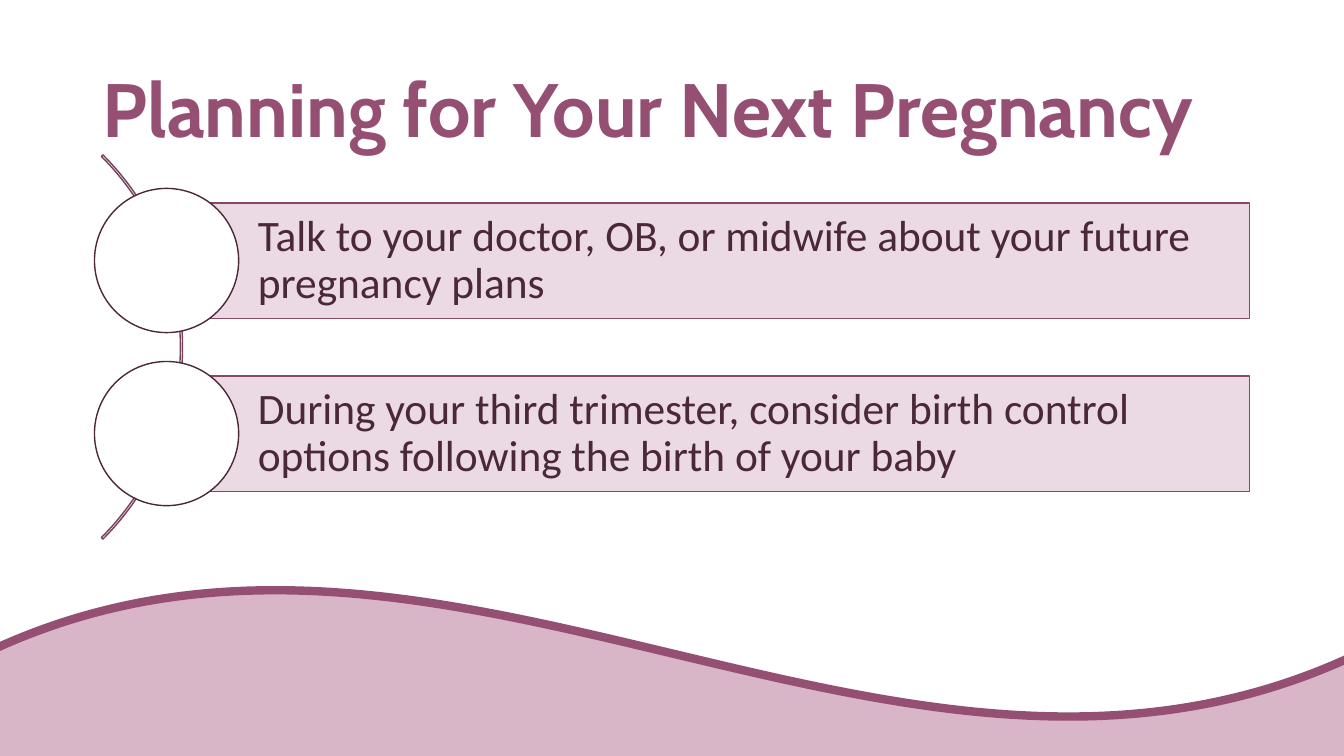
from pptx import Presentation
from pptx.dml.color import RGBColor
from pptx.enum.shapes import MSO_SHAPE
from pptx.enum.text import MSO_ANCHOR, PP_ALIGN
from pptx.util import Pt

COLORS = {
    "plum": "954F72", "wave": "D8B5C7", "arc": "773F5B", "bar": "EBDAE3",
    "bar_line": "874867", "dark": "4A2839", "white": "FFFFFF",
}
STEPS = [
    "Talk to your doctor, OB, or midwife about your future pregnancy plans",
    "During your third trimester, consider birth control options following "
    "the birth of your baby",
]


def rgb(name):
    """Return the named palette colour."""
    return RGBColor.from_string(COLORS[name])


def add_outlined(s, kind, box, fill, line, width=1):
    """Add a shape with an optional fill and a solid outline."""
    sp = s.shapes.add_shape(kind, *(Pt(v) for v in box))
    sp.shadow.inherit = False
    if fill:
        sp.fill.solid()
        sp.fill.fore_color.rgb = rgb(fill)
    else:
        sp.fill.background()
    sp.line.color.rgb = rgb(line)
    sp.line.width = Pt(width)
    return sp


def format_text(sp, text, font, size, color, bold=False):
    """Write one left-aligned paragraph, centred vertically."""
    tf = sp.text_frame
    tf.word_wrap = True
    tf.vertical_anchor = MSO_ANCHOR.MIDDLE
    p = tf.paragraphs[0]
    p.text = text
    p.alignment = PP_ALIGN.LEFT
    p.line_spacing = 0.9
    p.font.name = font
    p.font.size = Pt(size)
    p.font.bold = bold
    p.font.color.rgb = rgb(color)


def add_wave(s, box):
    """Place the decorative wave behind everything else."""
    sp = add_outlined(s, MSO_SHAPE.WAVE, box, "wave", "plum", 6)
    s.shapes._spTree.insert(2, sp._element)


def add_title(s, box):
    """Move and format the title placeholder."""
    title = s.shapes.title
    title.left, title.top, title.width, title.height = (Pt(v) for v in box)
    format_text(title, "Planning for Your Next Pregnancy", "Cabin", 54, "plum", True)


def add_step(s, text, box, diameter):
    """Draw a text bar with a circle centred on its left edge."""
    left, top, _, height = box
    bar = add_outlined(s, MSO_SHAPE.RECTANGLE, box, "bar", "bar_line")
    format_text(bar, text, "Calibri", 31, "dark")
    tf = bar.text_frame
    tf.margin_left = Pt(65.2)
    tf.margin_top = tf.margin_right = tf.margin_bottom = Pt(6.2)
    circle = (left - diameter / 2, top + (height - diameter) / 2, diameter, diameter)
    add_outlined(s, MSO_SHAPE.OVAL, circle, "white", "dark")


def add_steps(s, box):
    """Draw the arc and the evenly spaced steps along it."""
    left, top, width, height = box
    arc_size = 388
    arc_box = (left - 376.6, top + (height - arc_size) / 2, arc_size, arc_size)
    arc = add_outlined(s, MSO_SHAPE.BLOCK_ARC, arc_box, None, "arc")
    for i, value in enumerate((189, 27, 0.004)):
        arc.adjustments[i] = value
    bar_height = 82.4
    pitch = (height - bar_height) / (len(STEPS) - 1)
    for i, text in enumerate(STEPS):
        add_step(s, text, (left, top + i * pitch, width, bar_height), 103)


def main():
    """Build and save the slide."""
    prs = Presentation()
    prs.slide_width, prs.slide_height = Pt(960), Pt(540)
    s = prs.slides.add_slide(prs.slide_layouts[5])
    add_wave(s, (-10.8, 419.8, 981.4, 375.1))
    add_title(s, (66, 28.8, 828, 104.4))
    add_steps(s, (119, 144.9, 773.5, 206))
    prs.save("out.pptx")


if __name__ == "__main__":
    main()
